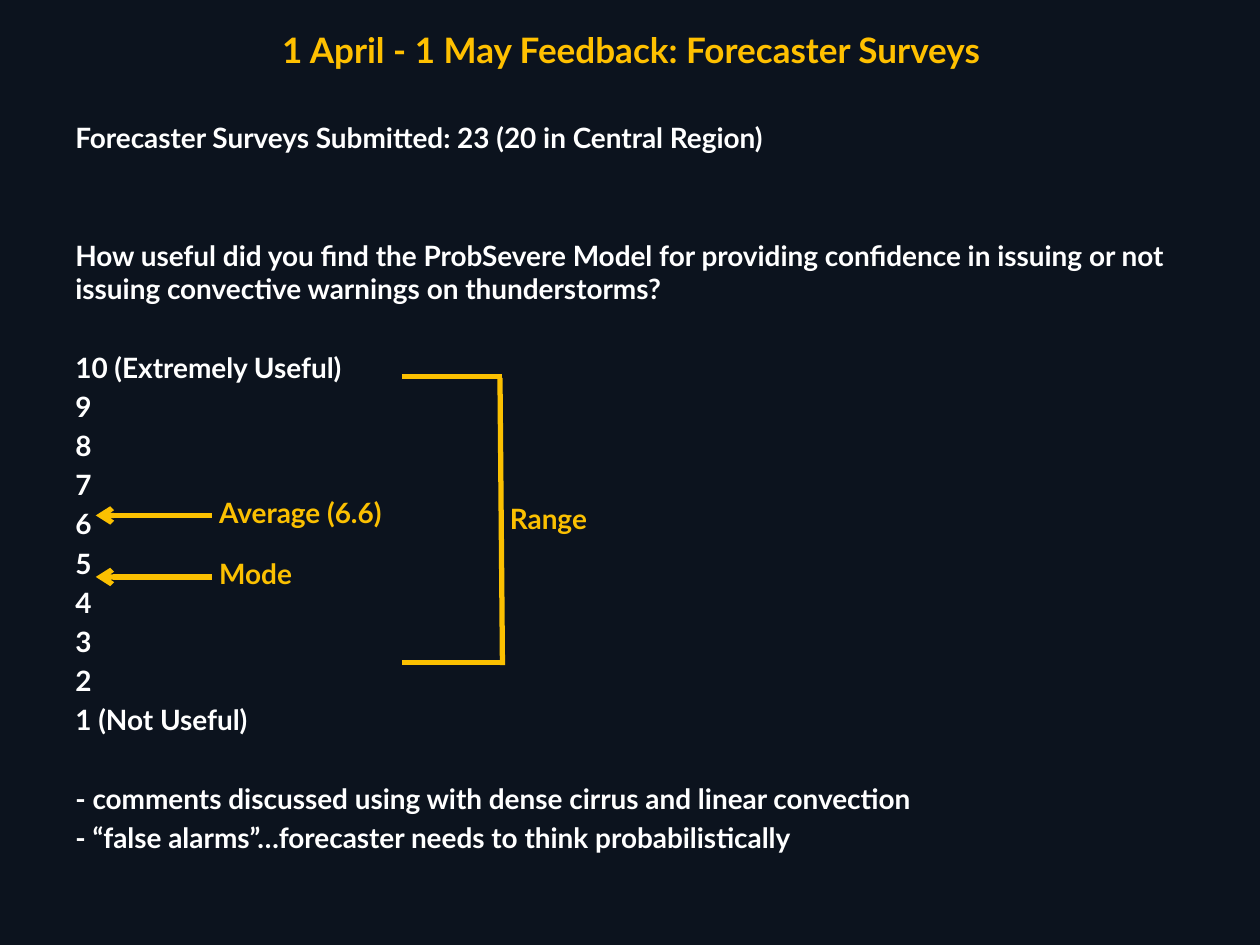
from dataclasses import dataclass

from lxml.etree import SubElement
from pptx import Presentation
from pptx.dml.color import RGBColor
from pptx.enum.shapes import MSO_CONNECTOR
from pptx.enum.text import MSO_AUTO_SIZE, PP_ALIGN
from pptx.oxml.ns import qn
from pptx.util import Cm, Pt


@dataclass(frozen=True)
class Theme:
    font: str = "Lato"
    back: RGBColor = RGBColor(0x0C, 0x13, 0x1E)
    text: RGBColor = RGBColor(0xFF, 0xFF, 0xFF)
    title: RGBColor = RGBColor(0xFF, 0xC0, 0x00)
    mark: RGBColor = RGBColor(0xFB, 0xC0, 0x01)
    head: int = 20
    body: int = 16
    line: int = 3


THEME = Theme()
TIGHT = THEME.body * 0.2  # space before each line of a group
GAP = TIGHT + THEME.body * 1.4  # one line of room between groups
WIDE = GAP + THEME.body * 1.4

TITLE = "1 April - 1 May Feedback: Forecaster Surveys"
GROUPS = [
    (28.4, ["Forecaster Surveys Submitted: 23 (20 in Central Region)"]),
    (WIDE, ["How useful did you find the ProbSevere Model for providing "
            "confidence in issuing or not issuing convective warnings "
            "on thunderstorms?"]),
    (GAP, ["10 (Extremely Useful)", *map(str, range(9, 1, -1)),
           "1 (Not Useful)"]),
    (GAP, ["- comments discussed using with dense cirrus and linear convection",
           "- “false alarms”…forecaster needs to think probabilistically"]),
]


def style(para, text, size, color):
    para.text = text
    font = para.font
    font.name, font.size, font.bold = THEME.font, Pt(size), True
    font.color.rgb = color


def add_text(slide, left, top, width, height):
    frame = slide.shapes.add_textbox(
        Cm(left), Cm(top), Cm(width), Cm(height)).text_frame
    frame.word_wrap = True
    return frame


def add_label(slide, left, top, text):
    frame = add_text(slide, left, top, 6.83, 0.94)
    frame.auto_size = MSO_AUTO_SIZE.SHAPE_TO_FIT_TEXT
    style(frame.paragraphs[0], text, THEME.body, THEME.mark)


def add_line(slide, x1, y1, x2, y2, arrow=False):
    link = slide.shapes.add_connector(
        MSO_CONNECTOR.STRAIGHT, Cm(x1), Cm(y1), Cm(x2), Cm(y2))
    link.line.color.rgb = THEME.mark
    link.line.width = Pt(THEME.line)
    if arrow:
        SubElement(link.line._get_or_add_ln(), qn("a:tailEnd"), type="arrow")
    SubElement(link._element.spPr, qn("a:effectLst"))


def add_survey(slide, left, top, width, height):
    frame = add_text(slide, left, top, width, height)
    head = frame.paragraphs[0]
    head.alignment = PP_ALIGN.CENTER
    style(head, TITLE, THEME.head, THEME.title)
    for space, lines in GROUPS:
        for i, text in enumerate(lines):
            para = frame.add_paragraph()
            para.space_before = Pt(TIGHT if i else space)
            style(para, text, THEME.body, THEME.text)


def add_marker(slide, left, mid, width, text):
    """Arrow pointing left at a score, with its label on the right."""
    add_line(slide, left + width, mid, left, mid, arrow=True)
    add_label(slide, left + width - 0.1, mid - 0.53, text)


def add_range(slide, left, top, width, height, text):
    """Bracket open to the left, with its label on the right."""
    right, base = left + width, top + height
    for y in (top, base):
        add_line(slide, left, y, right, y)
    add_line(slide, right - 0.05, top + 0.03, right, base + 0.05)
    add_label(slide, right - 0.1, top + 2.39, text)


def main():
    deck = Presentation()
    deck.slide_width, deck.slide_height = Cm(25.4), Cm(19.05)
    slide = deck.slides.add_slide(deck.slide_layouts[6])
    fill = slide.background.fill
    fill.solid()
    fill.fore_color.rgb = THEME.back

    add_survey(slide, 1.27, 0.46, 22.91, 17.07)
    for mid, text in ((10.39, "Average (6.6)"), (11.63, "Mode")):
        add_marker(slide, 1.93, mid, 2.34, text)
    add_range(slide, 8.1, 7.59, 2.03, 5.77, "Range")
    deck.save("out.pptx")


if __name__ == "__main__":
    main()
